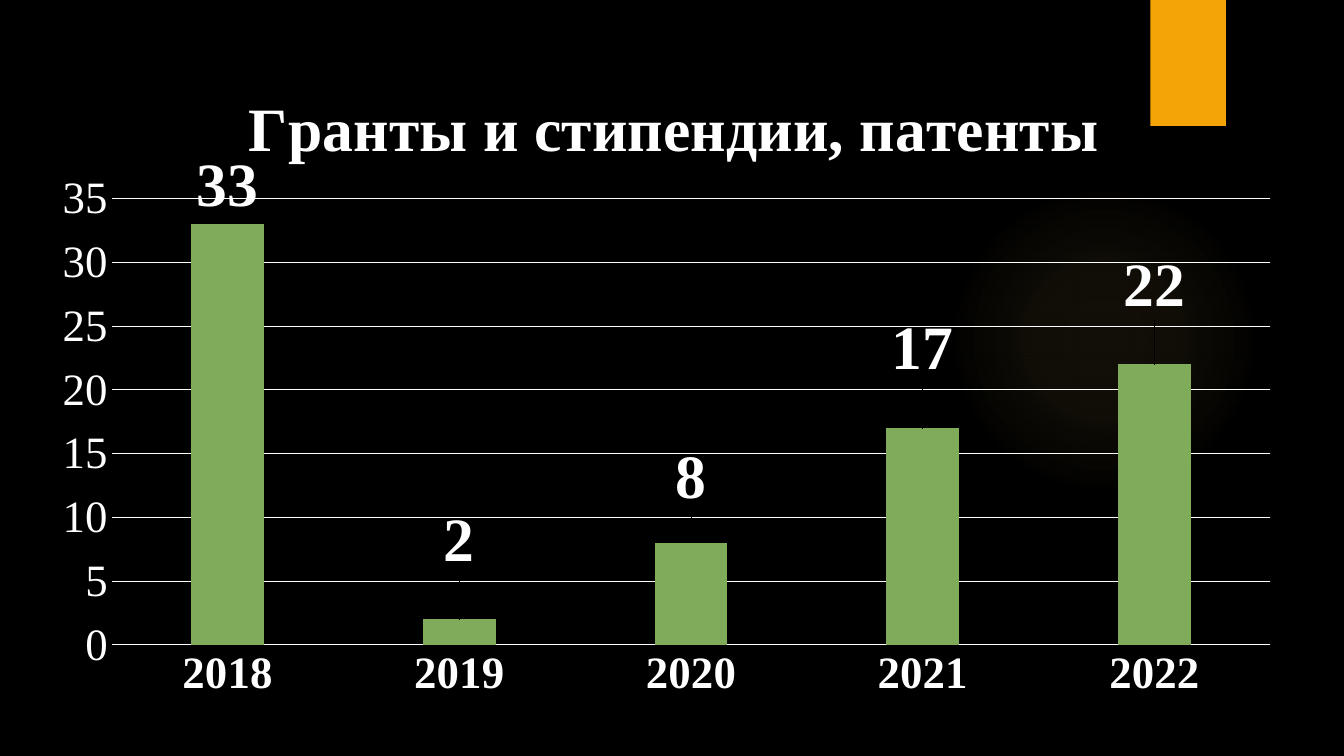
from dataclasses import dataclass

import lxml.etree
import pptx
import pptx.chart.data
import pptx.dml.color
import pptx.enum.chart
import pptx.enum.shapes
import pptx.oxml
import pptx.oxml.ns
import pptx.util

PX = 9144  # EMU per px, 100 px to the inch
qn = pptx.oxml.ns.qn
Shapes = pptx.enum.shapes.MSO_SHAPE
Charts = pptx.enum.chart


@dataclass(frozen=True)
class Theme:
    back: str = "000000"
    text: str = "FFFFFF"
    bar: str = "7FAB5B"
    tab: str = "F5A408"
    glow: str = "FAC96A"
    face: str = "Times New Roman"
    base: str = "League Spartan"
    small: int = 10
    tick: int = 32
    large: int = 44
    line: float = 0.75


@dataclass(frozen=True)
class Box:
    left: int
    top: int
    width: int
    height: int

    def emu(self) -> list[int]:
        return [n * PX for n in (self.left, self.top, self.width, self.height)]


@dataclass(frozen=True)
class Year:
    name: str
    count: int
    lift: float  # label shift as a share of the chart height


THEME = Theme()
TITLE = "Гранты и стипендии, патенты"
GLOW = Box(941, 183, 308, 308)
TAB = Box(1141, 0, 75, 125)
CHART = Box(36, 36, 1249, 671)
YEARS = [
    Year("2018", 33, 0),
    Year("2019", 2, -0.06),
    Year("2020", 8, -0.04),
    Year("2021", 17, -0.06),
    Year("2022", 22, -0.06),
]


def rgb(code: str) -> pptx.dml.color.RGBColor:
    return pptx.dml.color.RGBColor.from_string(code)


def style(font, size: int, bold: bool = False, face: str = THEME.face) -> None:
    font.name, font.size, font.bold = face, pptx.util.Pt(size), bold
    font.color.rgb = rgb(THEME.text)


def write(frame, text: str, **look) -> None:
    run = frame.paragraphs[0].add_run()
    run.text = text
    style(run.font, **look)


def rule(line) -> None:
    line.color.rgb = rgb(THEME.text)
    line.width = pptx.util.Pt(THEME.line)


def layout(**parts):
    """Manual chart layout; each keyword is a child tag with its value."""
    root = lxml.etree.Element(qn("c:layout"))
    manual = lxml.etree.SubElement(root, qn("c:manualLayout"))
    for tag, value in parts.items():
        lxml.etree.SubElement(manual, qn(f"c:{tag}")).set("val", str(value))
    return root


def place(node, index: int, **parts) -> None:
    for old in node.findall(qn("c:layout")):
        node.remove(old)
    node.insert(index, layout(**parts))


def block(slide, kind, box: Box):
    shape = slide.shapes.add_shape(kind, *box.emu())
    shape.line.fill.background()
    shape.shadow.inherit = False
    return shape


def glow(slide) -> None:
    shape = block(slide, Shapes.OVAL, GLOW)
    shape.fill.background()
    stops = "".join(
        f'<a:gs pos="{at * 1000}"><a:srgbClr val="{THEME.glow}">'
        f'<a:alpha val="{alpha * 1000}"/></a:srgbClr></a:gs>'
        for at, alpha in ((0, 7), (36, 6), (69, 0))
    )
    fill = pptx.oxml.parse_xml(
        f'<a:gradFill {pptx.oxml.ns.nsdecls("a")}><a:gsLst>{stops}</a:gsLst>'
        '<a:path path="circle"><a:fillToRect l="50000" t="50000" r="50000" '
        'b="50000"/></a:path></a:gradFill>'
    )
    props = shape.element.spPr
    props.replace(props.find(qn("a:noFill")), fill)


def tab(slide) -> None:
    shape = block(slide, Shapes.RECTANGLE, TAB)
    shape.fill.solid()
    shape.fill.fore_color.rgb = rgb(THEME.tab)
    shade = pptx.oxml.parse_xml(
        f'<a:outerShdw {pptx.oxml.ns.nsdecls("a")} blurRad="38100" dist="25400" '
        'dir="5400000" rotWithShape="0"><a:srgbClr val="000000">'
        '<a:alpha val="45000"/></a:srgbClr></a:outerShdw>'
    )
    shape.element.spPr.find(qn("a:effectLst")).append(shade)


def axes(chart) -> None:
    years, scale = chart.category_axis, chart.value_axis
    for axis in (years, scale):
        axis.major_tick_mark = axis.minor_tick_mark = Charts.XL_TICK_MARK.NONE
        style(axis.tick_labels.font, THEME.tick, bold=axis is years)
    rule(years.format.line)
    scale.format.line.fill.background()
    scale.minimum_scale, scale.maximum_scale, scale.major_unit = 0, 35, 5
    rule(scale.major_gridlines.format.line)


def bars(chart) -> None:
    plot = chart.plots[0]
    plot.gap_width, plot.overlap, plot.vary_by_categories = 219, -27, False
    series = plot.series[0]
    series.format.fill.solid()
    series.format.fill.fore_color.rgb = rgb(THEME.bar)
    series.data_labels.show_value = True
    style(series.data_labels.font, THEME.large, bold=True)
    for index in range(len(YEARS)):
        label = series.points[index].data_label
        style(label.font, THEME.large, bold=True)
        label.position = Charts.XL_LABEL_POSITION.OUTSIDE_END
    for node, year in zip(chart.element.iter(qn("c:dLbl")), YEARS):
        if year.lift:
            place(node, 1, x=0, y=year.lift)


def graph(slide) -> None:
    data = pptx.chart.data.CategoryChartData()
    data.categories = [year.name for year in YEARS]
    data.add_series(TITLE, [year.count for year in YEARS])
    kind = Charts.XL_CHART_TYPE.COLUMN_CLUSTERED
    chart = slide.shapes.add_chart(kind, *CHART.emu(), data).chart
    style(chart.font, THEME.small, face=THEME.base)
    chart.has_legend = False
    chart.has_title = True
    write(chart.chart_title.text_frame, TITLE, size=THEME.large, bold=True)
    chart.chart_title.include_in_layout = False
    axes(chart)
    bars(chart)
    # Title and plot area positions
    place(chart.element.find(".//" + qn("c:title")), 1,
          xMode="edge", yMode="edge", x=0.16, y=0.06)
    place(chart.element.find(".//" + qn("c:plotArea")), 0,
          layoutTarget="inner", xMode="edge", yMode="edge",
          x=0.06, y=0.24, w=0.92, h=0.66)


def main() -> None:
    deck = pptx.Presentation()
    deck.slide_width, deck.slide_height = 1333 * PX, 750 * PX
    slide = deck.slides.add_slide(deck.slide_layouts[6])
    slide.background.fill.solid()
    slide.background.fill.fore_color.rgb = rgb(THEME.back)
    # Decoration, then the chart on top
    glow(slide)
    tab(slide)
    graph(slide)
    deck.save("out.pptx")


if __name__ == "__main__":
    main()
